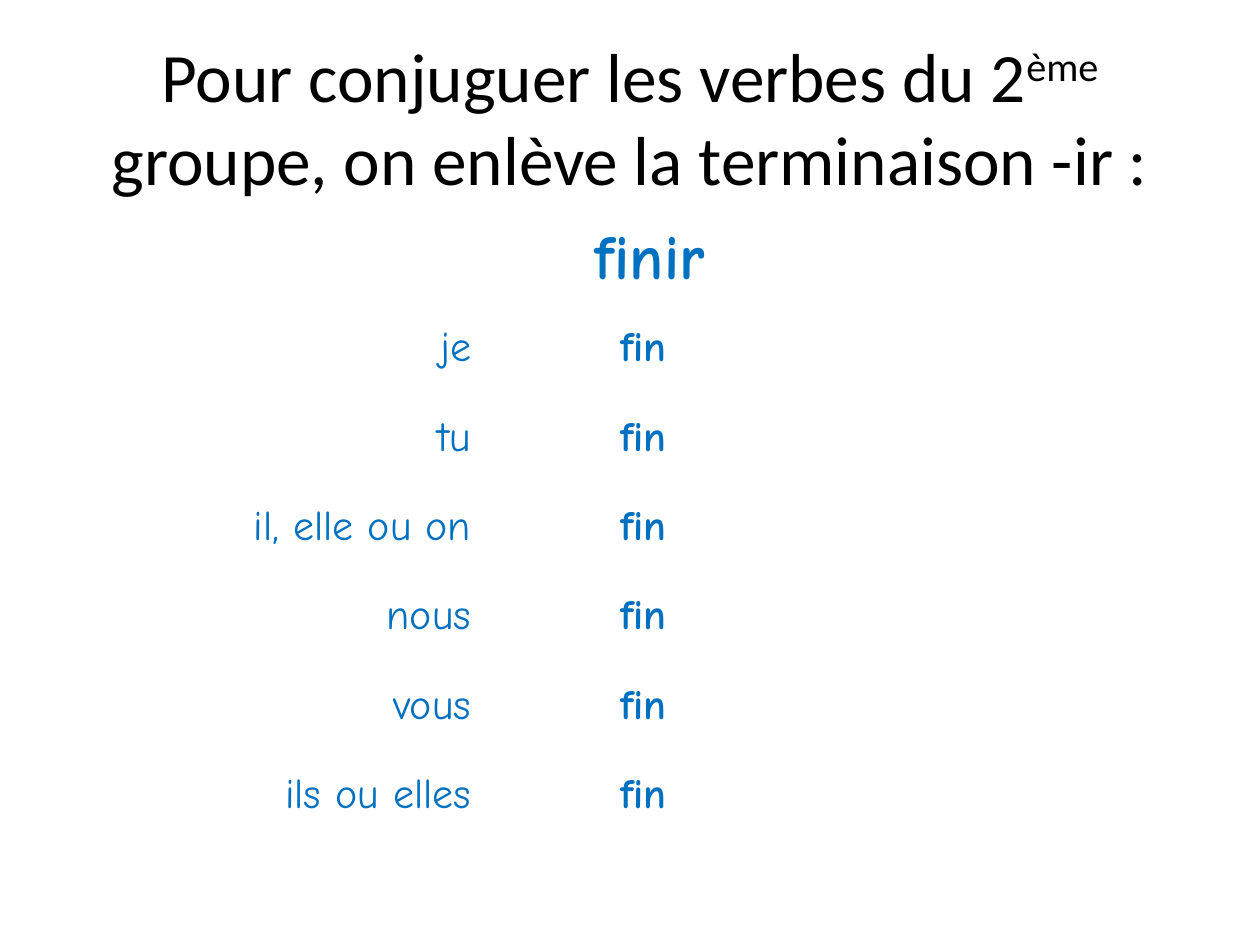
from pptx import Presentation
from pptx.dml.color import RGBColor
from pptx.enum.text import MSO_ANCHOR, PP_ALIGN
from pptx.util import Cm, Pt

MIDDLE = MSO_ANCHOR.MIDDLE
CENTER, RIGHT = PP_ALIGN.CENTER, PP_ALIGN.RIGHT

COLORS = {"title": "000000", "verb": "0070C0", "cell": "FFFFFF"}
TITLE_FONT = {"name": "Calibri", "size": Pt(39.6)}
VERB_FONT = {"name": "Comic Neue", "size": Pt(36), "bold": True}
PRONOUN_FONT = {"name": "Comic Neue", "size": Pt(24), "bold": False}
STEM_FONT = {**PRONOUN_FONT, "bold": True}

TITLE = [
    ("Pour conjuguer les verbes du 2", None),
    ("ème ", "30000"),
    ("groupe, on enlève la terminaison -ir :", None),
]
PRONOUNS = ["je", "tu", "il, elle ou on", "nous", "vous", "ils ou elles"]


def add_run(p, text, font, color):
    r = p.add_run()
    r.text = text
    for name, value in font.items():
        setattr(r.font, name, value)
    r.font.color.rgb = RGBColor.from_string(COLORS[color])
    return r


def add_title(slide, x, y, w, h):
    tf = slide.shapes.add_textbox(Cm(x), Cm(y), Cm(w), Cm(h)).text_frame
    tf.word_wrap = True
    tf.vertical_anchor = MIDDLE
    p = tf.paragraphs[0]
    p.alignment = CENTER
    for text, baseline in TITLE:
        r = add_run(p, text, TITLE_FONT, "title")
        if baseline:
            r.font._element.set("baseline", baseline)


def fill_cell(cell, text, font, align):
    cell.vertical_anchor = MIDDLE
    p = cell.text_frame.paragraphs[0]
    p.alignment = align
    add_run(p, text, font, "verb")


def add_conjugation(slide, x, y, w, h):
    rows = len(PRONOUNS) + 1
    table = slide.shapes.add_table(rows, 3, Cm(x), Cm(y), Cm(w), Cm(h)).table
    table.first_row = table.horz_banding = False
    pronoun_w, stem_w = 6.65, 3.94
    widths = [pronoun_w, stem_w, w - pronoun_w - stem_w]
    for column, width in zip(table.columns, widths):
        column.width = Cm(width)
    for row in table.rows:
        row.height = Cm(h / rows)
    for cell in table.iter_cells():
        cell.fill.solid()
        cell.fill.fore_color.rgb = RGBColor.from_string(COLORS["cell"])

    table.cell(0, 0).merge(table.cell(0, 2))
    fill_cell(table.cell(0, 0), "finir", VERB_FONT, CENTER)
    for i, pronoun in enumerate(PRONOUNS, 1):
        fill_cell(table.cell(i, 0), pronoun, PRONOUN_FONT, RIGHT)
        fill_cell(table.cell(i, 1), "fin", STEM_FONT, RIGHT)


def main():
    prs = Presentation()
    prs.slide_width, prs.slide_height = Cm(25.4), Cm(19.05)
    slide = prs.slides.add_slide(prs.slide_layouts[6])
    add_title(slide, 1.27, 0.76, 22.86, 3.18)
    add_conjugation(slide, 3.1, 4.32, 19.99, 12.6)
    prs.save("out.pptx")


if __name__ == "__main__":
    main()
